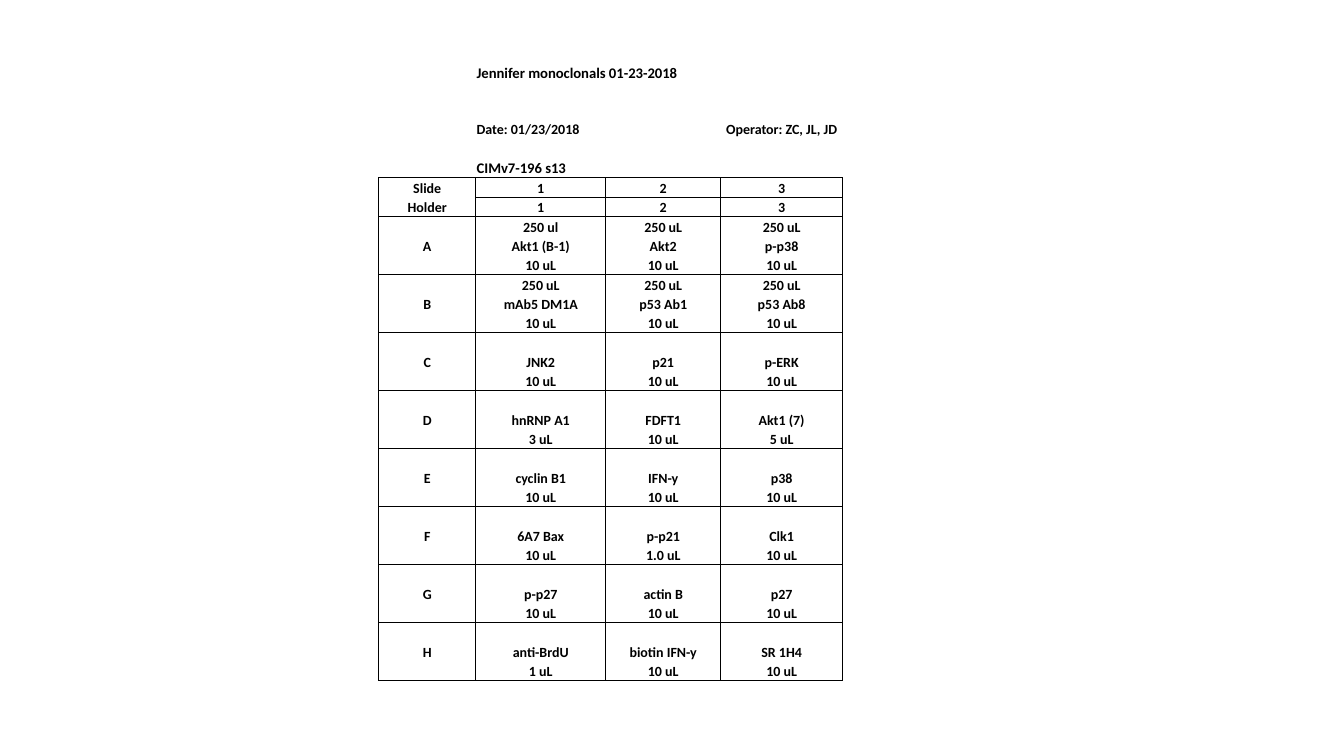
"""Build the slide with the monoclonal antibody plate table."""
import pptx
import pptx.util
import pptx.dml.color
import pptx.enum.text
import pptx.oxml.ns
from lxml import etree

Pt = pptx.util.Pt
COLOR = {"ink": "000000"}
FONT = "Calibri"
WIDTHS = [69.3, 92.9, 82.1, 87.1]
TOPS = [15, 13.7, 25.8, 28.6, 13.9, 13.9]
HEAD = 4
BODY = len(TOPS)
STEP = 3

HEADER = [
    ["", "Jennifer monoclonals 01-23-2018", "", ""],
    [""] * 4,
    ["", "Date: 01/23/2018", "", "Operator: ZC, JL, JD"],
    ["", "CIMv7-196 s13", "", ""],
    ["Slide", "1", "2", "3"],
    ["Holder", "1", "2", "3"],
]
NONE = [""] * 3
FULL = ["10 uL"] * 3
WELLS = [
    ("A", ["250 ul", "250 uL", "250 uL"], ["Akt1 (B-1)", "Akt2", "p-p38"], FULL),
    ("B", ["250 uL"] * 3, ["mAb5 DM1A", "p53 Ab1", "p53 Ab8"], FULL),
    ("C", NONE, ["JNK2", "p21", "p-ERK"], FULL),
    ("D", NONE, ["hnRNP A1", "FDFT1", "Akt1 (7)"], ["3 uL", "10 uL", "5 uL"]),
    ("E", NONE, ["cyclin B1", "IFN-y", "p38"], FULL),
    ("F", NONE, ["6A7 Bax", "p-p21", "Clk1"], ["10 uL", "1.0 uL", "10 uL"]),
    ("G", NONE, ["p-p27", "actin B", "p27"], FULL),
    ("H", NONE, ["anti-BrdU", "biotin IFN-y", "SR 1H4"], ["1 uL", "10 uL", "10 uL"]),
]


def get_rows():
    """Return the header rows followed by three rows per well."""
    rows = list(HEADER)
    for mark, volume, names, doses in WELLS:
        rows += [["", *volume], [mark, *names], ["", *doses]]
    return rows


def side_width(row, edge):
    """Return the width of a vertical edge beside a row."""
    if row < HEAD:
        return 0
    return 1 if row >= BODY and edge in (0, 1, 4) else 0.5


def rule_width(edge, col, last):
    """Return the width of a horizontal edge across a column."""
    if edge in (BODY, last):
        return 1
    if edge == HEAD or (edge == HEAD + 1 and col > 0):
        return 0.5
    return 0.5 if edge > BODY and (edge - BODY) % STEP == 0 else 0


def add_edge(cell, side, width):
    """Give one side of a cell a line, or none."""
    name = pptx.oxml.ns.qn
    props = cell._tc.get_or_add_tcPr()
    line = etree.SubElement(props, name("a:ln" + side), w=str(int(Pt(width))))
    if width:
        fill = etree.SubElement(line, name("a:solidFill"))
        etree.SubElement(fill, name("a:srgbClr"), val=COLOR["ink"])
    else:
        etree.SubElement(line, name("a:noFill"))


def set_text(cell, text, size, align):
    """Write bold text at the bottom of a cell."""
    cell.margin_left = cell.margin_right = cell.margin_top = Pt(0.7)
    cell.margin_bottom = 0
    cell.vertical_anchor = pptx.enum.text.MSO_ANCHOR.BOTTOM
    para = cell.text_frame.paragraphs[0]
    para.alignment = align
    if not text:
        tag = pptx.oxml.ns.qn("a:endParaRPr")
        etree.SubElement(para._p, tag, sz=str(int(size * 100)))
        return
    para.text = text
    font = para.runs[0].font
    font.name, font.size, font.bold = FONT, Pt(size), True
    font.color.rgb = pptx.dml.color.RGBColor.from_string(COLOR["ink"])


def add_grid(slide, rows):
    """Add the table with its sizes, edges and text."""
    sizes = TOPS + [13.83] * (len(rows) - BODY)
    frame = slide.shapes.add_table(
        len(rows), len(WIDTHS), Pt(270.5), Pt(43.9), Pt(sum(WIDTHS)), Pt(sum(sizes)))
    table = frame.table
    table.first_row = table.horz_banding = False
    for col, width in zip(table.columns, WIDTHS):
        col.width = Pt(width)
    for row, height in zip(table.rows, sizes):
        row.height = Pt(height)
    kinds = pptx.enum.text.PP_ALIGN
    for r, row in enumerate(rows):
        for c, text in enumerate(row):
            cell = table.cell(r, c)
            add_edge(cell, "L", side_width(r, c))
            add_edge(cell, "R", side_width(r, c + 1))
            add_edge(cell, "T", rule_width(r, c, len(rows)))
            add_edge(cell, "B", rule_width(r + 1, c, len(rows)))
            cell.fill.background()
            left = r < HEAD and c == 1
            size = 10.5 if r in (0, 3) else 10
            set_text(cell, text, size, kinds.LEFT if left else kinds.CENTER)
    table.cell(0, 1).merge(table.cell(0, 3))
    table.cell(2, 1).merge(table.cell(2, 2))


def main():
    """Create the deck and save it."""
    deck = pptx.Presentation()
    deck.slide_width, deck.slide_height = Pt(960), Pt(540)
    slide = deck.slides.add_slide(deck.slide_layouts[6])
    add_grid(slide, get_rows())
    deck.save("out.pptx")


if __name__ == "__main__":
    main()
